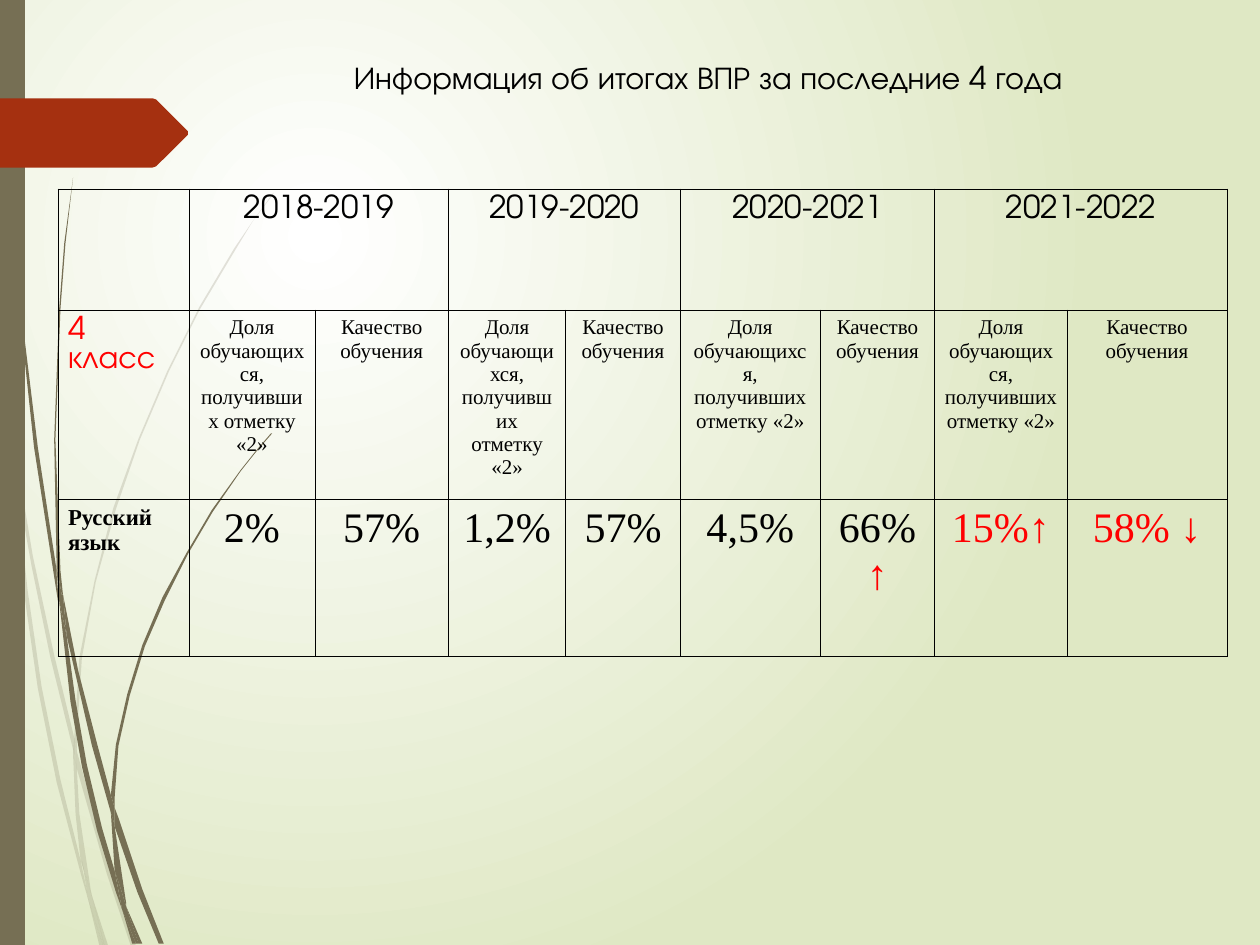
from dataclasses import dataclass

from lxml.etree import SubElement
from pptx import Presentation
from pptx.dml.color import RGBColor
from pptx.enum.text import MSO_AUTO_SIZE, PP_ALIGN
from pptx.oxml.ns import qn
from pptx.util import Inches, Pt


@dataclass(frozen=True)
class Theme:
    paper: str = "FFFFFF"
    meadow: str = "DFE8C4"
    grass: str = "766F54"
    accent: str = "A53010"
    ink: str = "000000"
    alert: str = "FF0000"
    heading_font: str = "TeX Gyre Adventor"
    body_font: str = "Times New Roman"
    heading_size: int = 18
    label_size: int = 12
    subject_size: int = 13
    value_size: int = 24
    border_width: float = 0.5
    faint_opacity: int = 20


# Grass blades: corner points of each outline, in inches
FAINT_BLADES = [
    [(0.08, 3.5), (0.06, 3.22), (0, 2.82), (0, 2.99), (0.07, 3.44)],
    [(0.4, 5.22), (0.59, 5.99), (0.59, 5.86), (0.43, 5.2), (0.26, 4.41),
     (0.1, 3.45), (0.12, 3.76), (0.25, 4.49)],
    [(0.64, 6.07), (0.61, 5.96), (0.61, 6.1), (0.85, 6.94), (1.04, 7.51),
     (1.08, 7.51), (0.88, 6.92)],
    [(0.83, 7.51), (0.86, 7.51), (0.73, 7.11)],
    [(0.64, 6.83), (0.48, 6.19), (0.33, 5.45), (0.22, 4.69), (0.12, 3.76),
     (0.08, 3.5), (0.19, 4.7), (0.3, 5.46), (0.45, 6.21), (0.64, 6.93),
     (0.7, 7.14), (0.69, 7.07)],
    [(0.58, 5.99), (0.6, 6.46), (0.64, 6.83), (0.67, 6.92), (0.73, 7.11),
     (0.72, 7.06), (0.63, 6.46), (0.61, 6.1), (0.61, 6.08)],
    [(0.61, 5.84), (0.65, 5.22), (0.76, 4.62), (0.92, 4.04), (1.11, 3.49),
     (1.34, 2.95), (1.59, 2.45), (1.87, 1.98), (2.01, 1.75), (2.17, 1.54),
     (2.17, 1.53), (2.01, 1.75), (1.86, 1.97), (1.58, 2.44), (1.33, 2.94),
     (1.1, 3.48), (0.9, 4.03), (0.75, 4.61), (0.63, 5.22), (0.59, 5.84),
     (0.59, 5.86), (0.61, 5.96)],
    [(0.7, 7.14), (0.79, 7.51), (0.82, 7.51)],
    [(0.61, 6.08), (0.61, 6.1), (0.61, 5.96), (0.59, 5.86), (0.58, 5.99)],
    [(0.67, 6.92), (0.65, 6.83), (0.69, 7.07), (0.7, 7.14), (0.82, 7.51),
     (0.83, 7.51), (0.73, 7.11)],
]
DARK_BLADES = [
    [(0.05, 1.1), (0.14, 2.33), (0.27, 3.55), (0.46, 4.77), (0.47, 4.81),
     (0.45, 4.57), (0.45, 4.53), (0.3, 3.55), (0.15, 2.32), (0.06, 1.09),
     (0.04, 0.48), (0.03, 0), (0.02, 0), (0.03, 0.48)],
    [(0.73, 5.92), (0.88, 6.45), (0.88, 6.33), (0.88, 6.31), (0.77, 5.9),
     (0.62, 5.32), (0.5, 4.72), (0.53, 5.05)],
    [(0.94, 6.49), (0.91, 6.41), (0.91, 6.56), (1.09, 7.08), (1.26, 7.49),
     (1.3, 7.49), (1.13, 7.06)],
    [(0.91, 6.91), (0.81, 6.57), (0.69, 6.07), (0.6, 5.56), (0.53, 5.05),
     (0.47, 4.77), (0.56, 5.57), (0.65, 6.08), (0.77, 6.59), (0.92, 7.08),
     (0.97, 7.22), (0.96, 7.17)],
    [(0.5, 4.72), (0.48, 4.53), (0.44, 3.49), (0.48, 2.45), (0.52, 1.93),
     (0.58, 1.41), (0.51, 1.93), (0.47, 2.45), (0.43, 3.49), (0.45, 4.49),
     (0.49, 4.72)],
    [(1.1, 7.49), (1.13, 7.49), (1, 7.19)],
    [(0.47, 4.77), (0.53, 5.05), (0.5, 4.72), (0.49, 4.72), (0.45, 4.49),
     (0.45, 4.53)],
    [(0.91, 6.33), (0.94, 5.92), (1.03, 5.52), (1.15, 5.13), (1.31, 4.76),
     (1.49, 4.4), (1.69, 4.06), (1.91, 3.74), (2.03, 3.59), (2.16, 3.44),
     (2.15, 3.44), (2.03, 3.58), (1.91, 3.73), (1.68, 4.05), (1.48, 4.39),
     (1.29, 4.74), (1.13, 5.12), (1.01, 5.51), (0.92, 5.91), (0.88, 6.31),
     (0.91, 6.41)],
    [(0.97, 7.22), (1.05, 7.49), (1.08, 7.49)],
    [(0.88, 6.45), (0.91, 6.91), (0.96, 7.06), (1, 7.19), (1, 7.16),
     (0.91, 6.56), (0.9, 6.51)],
    [(0.88, 6.45), (0.9, 6.51), (0.91, 6.56), (0.91, 6.41), (0.88, 6.31)],
    [(0.96, 7.06), (0.91, 6.91), (0.96, 7.17), (0.97, 7.22), (1.08, 7.49),
     (1.1, 7.49), (1, 7.19)],
]
SIDE_BAR = [(0, 0), (0.2, 0), (0.2, 7.5), (0, 7.5)]
ARROW_TAG = [(0, 0.78), (1.21, 0.78), (1.24, 0.79), (1.49, 1.04),
             (1.49, 1.07), (1.24, 1.32), (1.21, 1.33), (0, 1.33)]

# Table contents
YEARS = ["2018-2019", "2019-2020", "2020-2021", "2021-2022"]
MEASURES = ["Доля обучающихся, получивших отметку «2»", "Качество обучения"]
RESULTS = ["2%", "57%", "1,2%", "57%", "4,5%", "66%", "15%↑", "58% ↓"]
COLUMN_WIDTHS = [1.04, 1, 1.06, 0.93, 0.91, 1.11, 0.91, 1.05, 1.27]
ROW_HEIGHTS = [0.96, 1.5, 1.25]


class SlideBuilder:
    def __init__(self, slide, theme):
        self.slide = slide
        self.theme = theme

    def background(self):
        fill = self.slide.background.fill
        fill.gradient()
        for stop, color in zip(fill.gradient_stops, (self.theme.paper, self.theme.meadow)):
            stop.color.rgb = RGBColor.from_string(color)
        gradient = self.slide.element.find(".//" + qn("a:gradFill"))
        gradient.remove(gradient.find(qn("a:lin")))
        circle = SubElement(gradient, qn("a:path"), {"path": "circle"})
        SubElement(circle, qn("a:fillToRect"), l="50000", t="50000", r="100000", b="100000")

    def outline(self, points, color, opacity=100):
        corners = [(Inches(x), Inches(y)) for x, y in points]
        builder = self.slide.shapes.build_freeform(*corners[0])
        builder.add_line_segments(corners[1:], close=True)
        shape = builder.convert_to_shape()
        shape.shadow.inherit = False
        shape.line.fill.background()
        shape.fill.solid()
        shape.fill.fore_color.rgb = RGBColor.from_string(color)
        if opacity < 100:
            tint = shape.fill._xPr.find(".//" + qn("a:srgbClr"))
            SubElement(tint, qn("a:alpha"), val=str(opacity * 1000))

    def format_run(self, run, size, font, color, bold=False):
        run.font.size = Pt(size)
        run.font.name = font
        run.font.bold = bold
        run.font.color.rgb = RGBColor.from_string(color)

    def title(self, text, left, top, width, height):
        box = self.slide.shapes.add_textbox(*map(Inches, (left, top, width, height)))
        box.text_frame.word_wrap = False
        box.text_frame.auto_size = MSO_AUTO_SIZE.SHAPE_TO_FIT_TEXT
        box.text_frame.text = text
        self.format_run(box.text_frame.paragraphs[0].runs[0], self.theme.heading_size,
                        self.theme.heading_font, self.theme.ink)

    def table(self, left, top):
        frame = self.slide.shapes.add_table(
            len(ROW_HEIGHTS), len(COLUMN_WIDTHS), Inches(left), Inches(top),
            Inches(sum(COLUMN_WIDTHS)), Inches(sum(ROW_HEIGHTS)))
        table = frame.table
        table.first_row = table.horz_banding = False
        for column, width in zip(table.columns, COLUMN_WIDTHS):
            column.width = Inches(width)
        for row, height in zip(table.rows, ROW_HEIGHTS):
            row.height = Inches(height)
        for cell in table.iter_cells():
            cell.margin_left = cell.margin_right = Inches(0.08)
            self.cell_borders(cell)
        return table

    def cell_borders(self, cell):
        properties = cell._tc.get_or_add_tcPr()
        for side in ("a:lnL", "a:lnR", "a:lnT", "a:lnB"):
            line = SubElement(properties, qn(side), w=str(Pt(self.theme.border_width)))
            SubElement(SubElement(line, qn("a:solidFill")), qn("a:srgbClr"), val=self.theme.ink)
        cell.fill.background()

    def cell_text(self, cell, text, size, font, color, bold=False, align=PP_ALIGN.CENTER):
        cell.text_frame.text = text
        paragraph = cell.text_frame.paragraphs[0]
        paragraph.alignment = align
        self.format_run(paragraph.runs[0], size, font, color, bold)
        return paragraph


def main():
    presentation = Presentation()
    presentation.slide_width, presentation.slide_height = Inches(10), Inches(7.5)
    theme = Theme()
    slide = SlideBuilder(presentation.slides.add_slide(presentation.slide_layouts[6]), theme)

    # Backdrop
    slide.background()
    for blade in FAINT_BLADES:
        slide.outline(blade, theme.grass, theme.faint_opacity)
    for shape in DARK_BLADES + [SIDE_BAR]:
        slide.outline(shape, theme.grass)
    slide.outline(ARROW_TAG, theme.accent)

    # Results table
    table = slide.table(0.46, 1.5)
    heading = (theme.heading_size, theme.heading_font)
    for index, year in enumerate(YEARS):
        first = 1 + 2 * index
        table.cell(0, first).merge(table.cell(0, first + 1))
        slide.cell_text(table.cell(0, first), year, *heading, theme.ink)
        for offset, measure in enumerate(MEASURES):
            slide.cell_text(table.cell(1, first + offset), measure,
                            theme.label_size, theme.body_font, theme.ink)
    slide.cell_text(table.cell(1, 0), "4 класс", *heading, theme.alert, align=PP_ALIGN.JUSTIFY)
    slide.cell_text(table.cell(2, 0), "Русский язык", theme.subject_size, theme.body_font,
                    theme.ink, bold=True, align=PP_ALIGN.JUSTIFY)
    value = (theme.value_size, theme.body_font)
    for column, result in enumerate(RESULTS, start=1):
        color = theme.alert if result[-1] in "↑↓" else theme.ink
        paragraph = slide.cell_text(table.cell(2, column), result, *value, color)
        if result == "66%":
            arrow = paragraph.add_run()
            arrow.text = "↑"
            slide.format_run(arrow, *value, theme.alert)

    # Title
    slide.title("Информация об итогах ВПР за последние 4 года", 2.71, 0.41, 6.48, 0.4)
    presentation.save("out.pptx")


if __name__ == "__main__":
    main()
